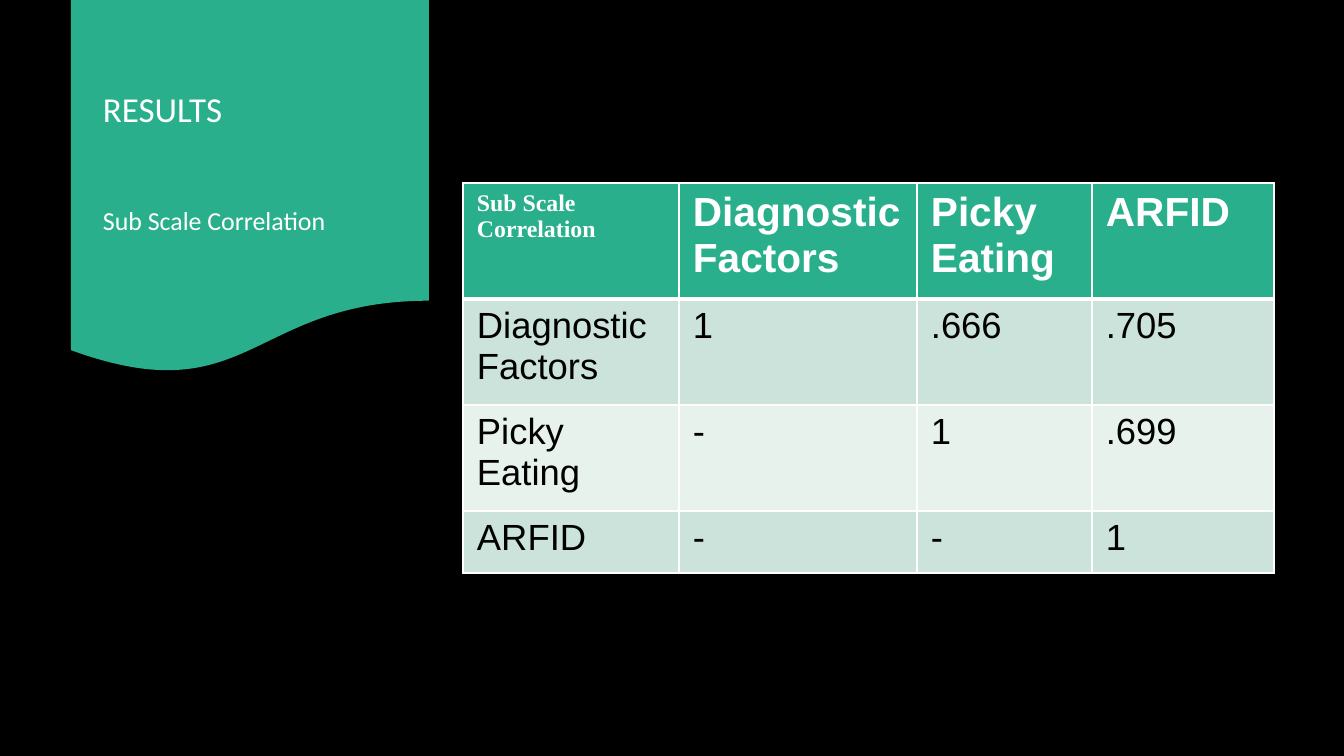
import pptx
import pptx.dml.color
import pptx.enum.shapes
import pptx.enum.text
import pptx.oxml
import pptx.oxml.ns
import pptx.util

RGBColor = pptx.dml.color.RGBColor
BLACK = RGBColor(0x00, 0x00, 0x00)
WHITE = RGBColor(0xFF, 0xFF, 0xFF)
GREEN = RGBColor(0x29, 0xAF, 0x8C)
BANDS = (RGBColor(0xCB, 0xE3, 0xDA), RGBColor(0xE7, 0xF2, 0xED))

EMU_PER_PX = 914400 / 100.8
COLUMN_WIDTHS = (216, 238, 175, 182)
ROW_HEIGHTS = (116, 106, 106, 62)
CORRELATIONS = (
    ("Sub Scale Correlation", "Diagnostic Factors", "Picky Eating", "ARFID"),
    ("Diagnostic Factors", "1", ".666", ".705"),
    ("Picky Eating", "-", "1", ".699"),
    ("ARFID", "-", "-", "1"),
)


def px(length):
    return pptx.util.Emu(round(length * EMU_PER_PX))


def format_text(paragraph, font_name, size, color, bold=False):
    for span in paragraph.runs:
        span.font.name = font_name
        span.font.size = pptx.util.Pt(size)
        span.font.color.rgb = color
        span.font.bold = bold


def add_banner(page):
    banner = page.shapes.add_shape(
        pptx.enum.shapes.MSO_SHAPE.FLOWCHART_DOCUMENT,
        px(71), px(0), px(358), px(375))
    banner.shadow.inherit = False
    banner.fill.solid()
    banner.fill.fore_color.rgb = GREEN
    banner.line.fill.background()


def add_heading(page):
    box = page.shapes.add_textbox(px(93), px(19), px(313), px(261))
    frame = box.text_frame
    frame.word_wrap = True
    frame.vertical_anchor = pptx.enum.text.MSO_ANCHOR.TOP
    frame.margin_top = px(77)
    frame.text = "RESULTS\nSub Scale Correlation"
    for para, size in zip(frame.paragraphs, (25, 18.5)):
        para.line_spacing = 0.8
        format_text(para, "Calibri", size, WHITE)
    frame.paragraphs[1].space_before = pptx.util.Pt(58)


def set_borders(cell, widths):
    """Draw white borders; widths maps a side (L, R, T, B) to points."""
    properties = cell._tc.get_or_add_tcPr()
    for position, (side, width) in enumerate(widths.items()):
        properties.insert(position, pptx.oxml.parse_xml(
            f'<a:ln{side} {pptx.oxml.ns.nsdecls("a")} w="{pptx.util.Pt(width)}">'
            f'<a:solidFill><a:srgbClr val="{WHITE}"/></a:solidFill></a:ln{side}>'))


def fill_cell(cell, text, row, column):
    header = row == 0
    cell.text = text
    cell.margin_left = cell.margin_right = px(14)
    cell.margin_top = cell.margin_bottom = px(7)
    cell.fill.solid()
    cell.fill.fore_color.rgb = GREEN if header else BANDS[(row - 1) % 2]
    para = cell.text_frame.paragraphs[0]
    if header and column == 0:
        format_text(para, "Times New Roman", 17, WHITE, True)
    elif header:
        format_text(para, "Arial", 29, WHITE, True)
    else:
        format_text(para, "Arial", 26, BLACK)
    set_borders(cell, {"L": 1, "R": 1, "T": 3 if row == 1 else 1,
                       "B": 3 if header else 1})


def add_correlation_table(page):
    table = page.shapes.add_table(
        len(ROW_HEIGHTS), len(COLUMN_WIDTHS), px(463), px(183),
        px(sum(COLUMN_WIDTHS)), px(sum(ROW_HEIGHTS))).table
    for column, width in zip(table.columns, COLUMN_WIDTHS):
        column.width = px(width)
    for row, height in zip(table.rows, ROW_HEIGHTS):
        row.height = px(height)
    for row, texts in enumerate(CORRELATIONS):
        for column, text in enumerate(texts):
            fill_cell(table.cell(row, column), text, row, column)


def main():
    deck = pptx.Presentation()
    deck.slide_width, deck.slide_height = px(1344), px(756)
    page = deck.slides.add_slide(deck.slide_layouts[6])
    page.background.fill.solid()
    page.background.fill.fore_color.rgb = BLACK
    add_banner(page)
    add_heading(page)
    add_correlation_table(page)
    deck.save("out.pptx")


if __name__ == "__main__":
    main()
